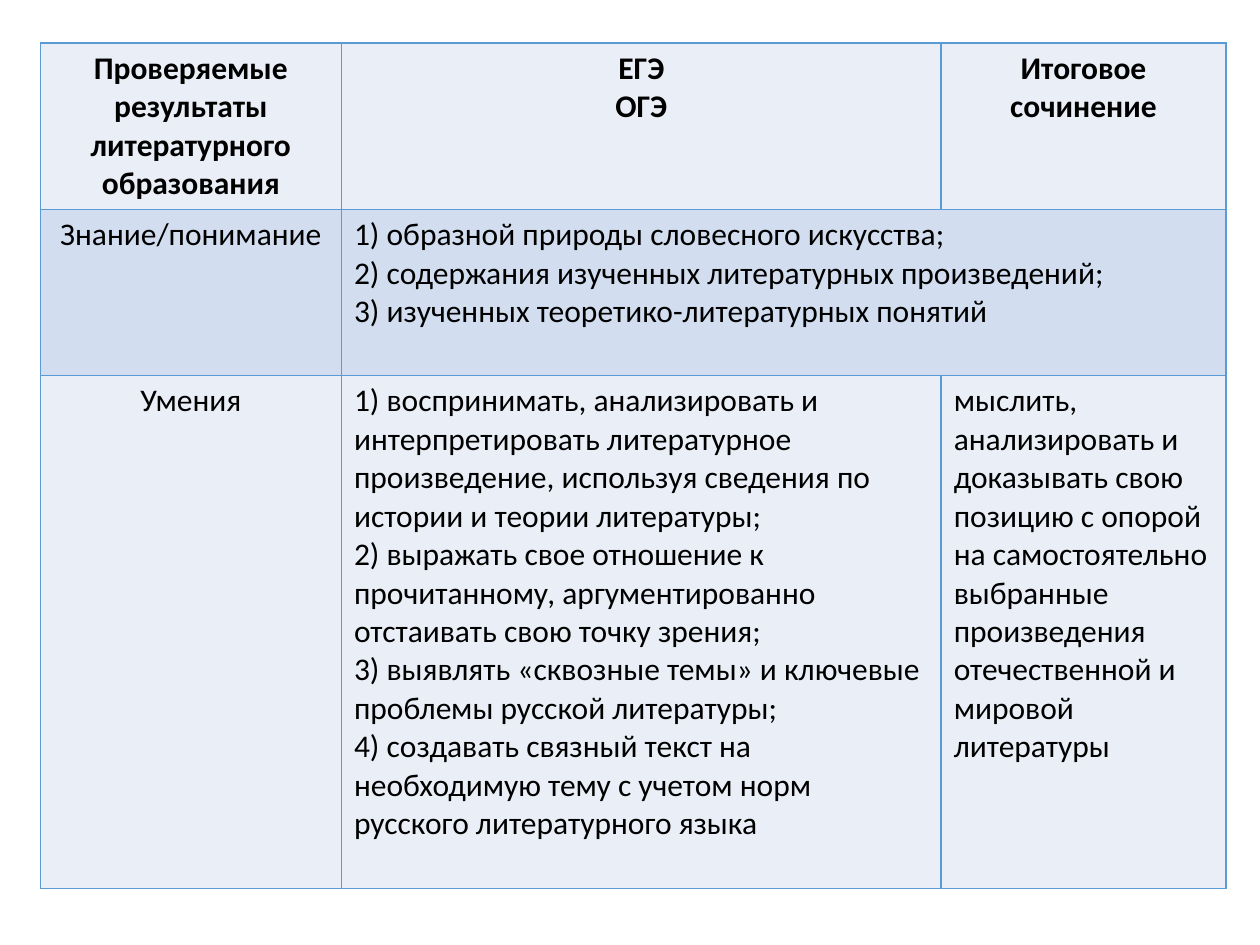
import dataclasses
import typing

import lxml.etree
import pptx
import pptx.dml.color
import pptx.enum.text
import pptx.oxml.ns
import pptx.util

FONT = "Calibri"
TEXT, BORDER = "000000", "5B9BD5"
LIGHT, BLUE = "EAEFF7", "D2DEEF"
LEFT, TOP = 0.32, 0.34
COLUMNS = (2.39, 4.76, 2.26)
ROWS = (1.32, 1.32, 4.07)


@dataclasses.dataclass
class Entry:
    row: int
    column: int
    lines: typing.Tuple[str, ...]
    centered: bool = False
    bold: bool = False
    columns: int = 1


ENTRIES = (
    # Header
    Entry(0, 0, ("Проверяемые результаты литературного образования",), True, True),
    Entry(0, 1, ("ЕГЭ", "ОГЭ"), True, True),
    Entry(0, 2, ("Итоговое сочинение",), True, True),
    # Knowledge
    Entry(1, 0, ("Знание/понимание",), True),
    Entry(1, 1, (
        "1) образной природы словесного искусства;",
        "2) содержания изученных литературных произведений;",
        "3) изученных теоретико-литературных понятий",
    ), columns=2),
    # Skills
    Entry(2, 0, ("Умения",), True),
    Entry(2, 1, (
        "1) воспринимать, анализировать и интерпретировать литературное произведение, "
        "используя сведения по истории и теории литературы;",
        "2) выражать свое отношение к прочитанному, аргументированно отстаивать "
        "свою точку зрения;",
        "3) выявлять «сквозные темы» и ключевые проблемы русской литературы;",
        "4) создавать связный текст на необходимую тему с учетом норм русского "
        "литературного языка",
    )),
    Entry(2, 2, (
        "мыслить, анализировать и доказывать свою позицию с опорой на самостоятельно "
        "выбранные произведения отечественной и мировой литературы",
    )),
)


def color(value: str) -> pptx.dml.color.RGBColor:
    return pptx.dml.color.RGBColor.from_string(value)


def add_borders(cell, value: str, width: float = 1) -> None:
    properties = cell._tc.get_or_add_tcPr()
    qualified = pptx.oxml.ns.qn
    for side in ("lnL", "lnR", "lnT", "lnB"):
        line = lxml.etree.SubElement(
            properties, qualified(f"a:{side}"), w=str(pptx.util.Pt(width)))
        fill = lxml.etree.SubElement(line, qualified("a:solidFill"))
        lxml.etree.SubElement(fill, qualified("a:srgbClr"), val=value)


def write(frame, lines: typing.Sequence[str], *, size: float = 18,
          bold: bool = False, centered: bool = False) -> None:
    align = pptx.enum.text.PP_ALIGN
    for index, line in enumerate(lines):
        para = frame.add_paragraph() if index else frame.paragraphs[0]
        para.alignment = align.CENTER if centered else align.LEFT
        span = para.add_run()
        span.text = line
        span.font.name = FONT
        span.font.size = pptx.util.Pt(size)
        span.font.bold = bold
        span.font.color.rgb = color(TEXT)


def add_results_table(page) -> None:
    inches = pptx.util.Inches
    table = page.shapes.add_table(
        len(ROWS), len(COLUMNS), inches(LEFT), inches(TOP),
        inches(sum(COLUMNS)), inches(sum(ROWS))).table
    for column, width in zip(table.columns, COLUMNS):
        column.width = inches(width)
    for row, height in zip(table.rows, ROWS):
        row.height = inches(height)

    # Borders and banded fills
    for index, row in enumerate(table.rows):
        for cell in row.cells:
            add_borders(cell, BORDER)
            cell.fill.solid()
            cell.fill.fore_color.rgb = color(BLUE if index % 2 else LIGHT)

    # Wording
    for entry in ENTRIES:
        cell = table.cell(entry.row, entry.column)
        if entry.columns > 1:
            cell.merge(table.cell(entry.row, entry.column + entry.columns - 1))
        write(cell.text_frame, entry.lines, bold=entry.bold, centered=entry.centered)


def main() -> None:
    deck = pptx.Presentation()
    deck.slide_width = pptx.util.Inches(10)
    deck.slide_height = pptx.util.Inches(7.5)
    page = deck.slides.add_slide(deck.slide_layouts[6])
    add_results_table(page)
    deck.save("out.pptx")


if __name__ == "__main__":
    main()
